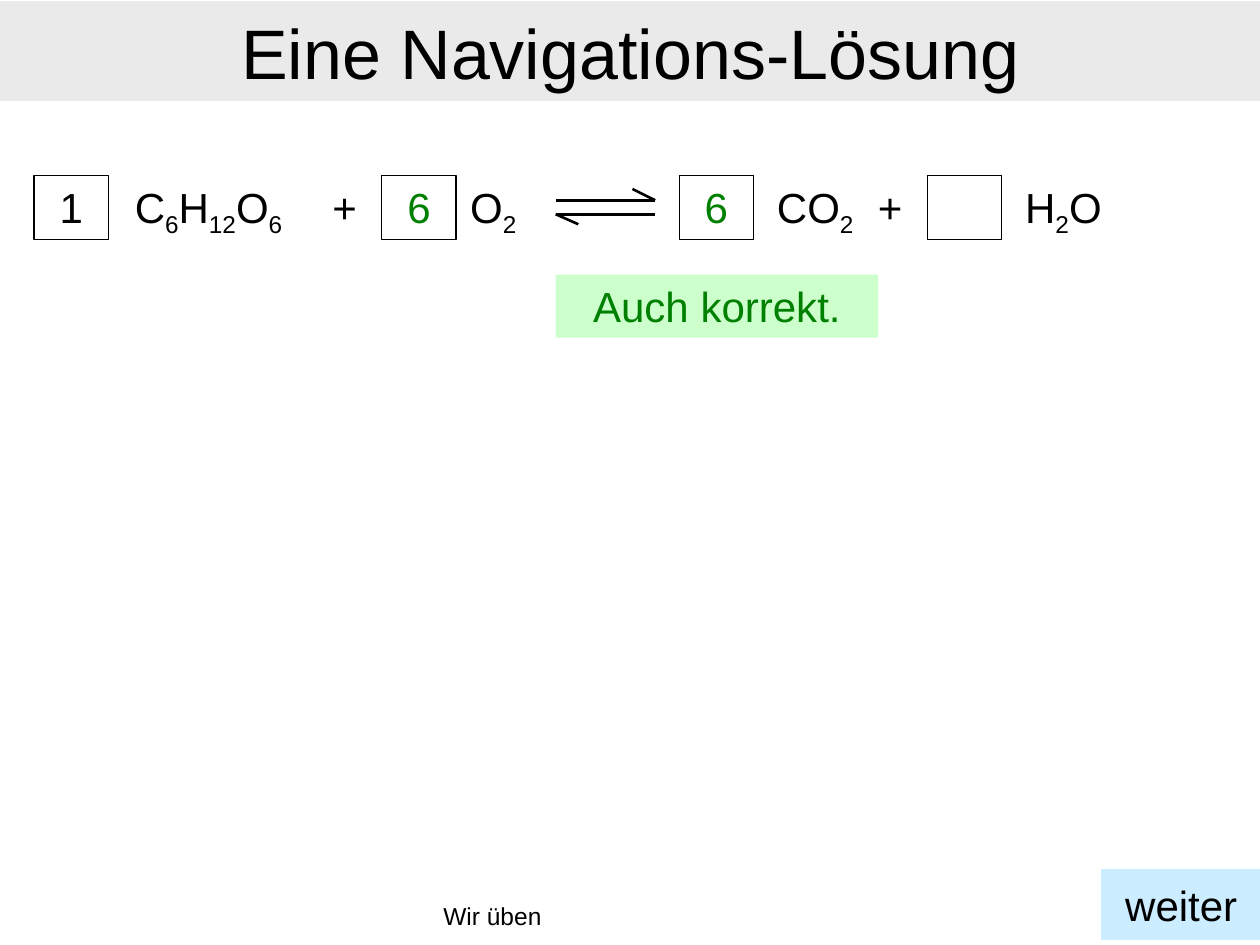
import pptx
import pptx.dml.color
import pptx.enum.shapes
import pptx.enum.text
import pptx.oxml.ns
import pptx.util
import lxml.etree

Inches = pptx.util.Inches
Pt = pptx.util.Pt
RGB = pptx.dml.color.RGBColor.from_string
SHAPE = pptx.enum.shapes.MSO_SHAPE
ALIGN = pptx.enum.text.PP_ALIGN
ANCHOR = pptx.enum.text.MSO_ANCHOR

THEME = {
    "font": "Arial", "title": 40, "body": 24, "footer": 14,
    "ink": "000000", "correct": "008000", "band": "EAEAEA",
    "praise": "CCFFCC", "button": "CCECFF",
}

deck = pptx.Presentation()
deck.slide_width, deck.slide_height = Inches(10), Inches(7.5)
slide = deck.slides.add_slide(deck.slide_layouts[6])


def write(item, text, size="body", color="ink", align=ALIGN.CENTER,
          anchor=ANCHOR.TOP, before=2.5):
    """Write text into an item; parts between underscores become subscripts."""
    frame = item.text_frame
    for name, value in {"word_wrap": True, "vertical_anchor": anchor}.items():
        setattr(frame, name, value)
    line = frame.paragraphs[0]
    for name, value in {"alignment": align, "space_before": Pt(before)}.items():
        setattr(line, name, value)
    for index, part in enumerate(text.split("_")):
        if not part:
            continue
        run = line.add_run()
        run.text = part
        for name, value in {"name": THEME["font"], "size": Pt(THEME[size])}.items():
            setattr(run.font, name, value)
        run.font.color.rgb = RGB(THEME[color])
        if index % 2:
            run._r.get_or_add_rPr().set("baseline", "-25000")


def add_panel(kind, left, top, width, height, fill=None):
    """Add a shape: filled without outline, or outlined without fill."""
    panel = slide.shapes.add_shape(
        kind, Inches(left), Inches(top), Inches(width), Inches(height))
    panel.shadow.inherit = False
    if fill:
        panel.fill.solid()
        panel.fill.fore_color.rgb = RGB(THEME[fill])
        panel.line.fill.background()
    else:
        panel.fill.background()
        panel.line.color.rgb = RGB(THEME["ink"])
        panel.line.width = Pt(0.75)
    return panel


# Footer and title band
footer = slide.shapes.add_textbox(Inches(3.42), Inches(7.1), Inches(3.17), Inches(0.39))
write(footer, "Wir üben", "footer", align=ALIGN.LEFT, before=0)
title = add_panel(SHAPE.RECTANGLE, 0, 0.01, 10, 0.79, "band")
write(title, "Eine Navigations-Lösung", "title", anchor=ANCHOR.MIDDLE, before=0)

# Reaction equation: formulas and plus signs
row_top, cell = 1.39, 0.59
for left, width, formula in [
    (0.87, 1.57, "C_6_H_12_O_6_"),
    (2.44, cell, "+"),
    (3.62, cell, "O_2_"),
    (5.98, 0.98, "CO_2_"),
    (6.77, cell, "+"),
    (7.95, 0.98, "H_2_O"),
]:
    term = slide.shapes.add_textbox(
        Inches(left), Inches(row_top), Inches(width), Inches(0.5))
    write(term, formula)

# Coefficient boxes, the last one still open
for left, coefficient, color in [
    (0.27, "1", "ink"),
    (3.03, "6", "correct"),
    (5.39, "6", "correct"),
    (7.36, "", "ink"),
]:
    box = add_panel(SHAPE.RECTANGLE, left, row_top, cell, 0.51)
    write(box, coefficient, color=color)

# Equilibrium arrows: each a shaft with one half barb
for start_x, start_y, end_x, end_y in [
    (4.41, 1.59, 5.2, 1.59),
    (5.2, 1.59, 5.02, 1.5),
    (5.2, 1.7, 4.41, 1.7),
    (4.41, 1.7, 4.59, 1.78),
]:
    stroke = slide.shapes.add_connector(
        pptx.enum.shapes.MSO_CONNECTOR.STRAIGHT,
        Inches(start_x), Inches(start_y), Inches(end_x), Inches(end_y))
    stroke.line.color.rgb = RGB(THEME["ink"])
    stroke.line.width = Pt(1.5)
    lxml.etree.SubElement(stroke._element.spPr, pptx.oxml.ns.qn("a:effectLst"))

# Navigation button and feedback
button = add_panel(SHAPE.ACTION_BUTTON_CUSTOM, 8.74, 6.9, 1.27, 0.56, "button")
write(button, "weiter", anchor=ANCHOR.MIDDLE)
feedback = add_panel(SHAPE.RECTANGLE, 4.41, 2.18, 2.56, 0.5, "praise")
write(feedback, "Auch korrekt.", color="correct")

deck.save("out.pptx")
